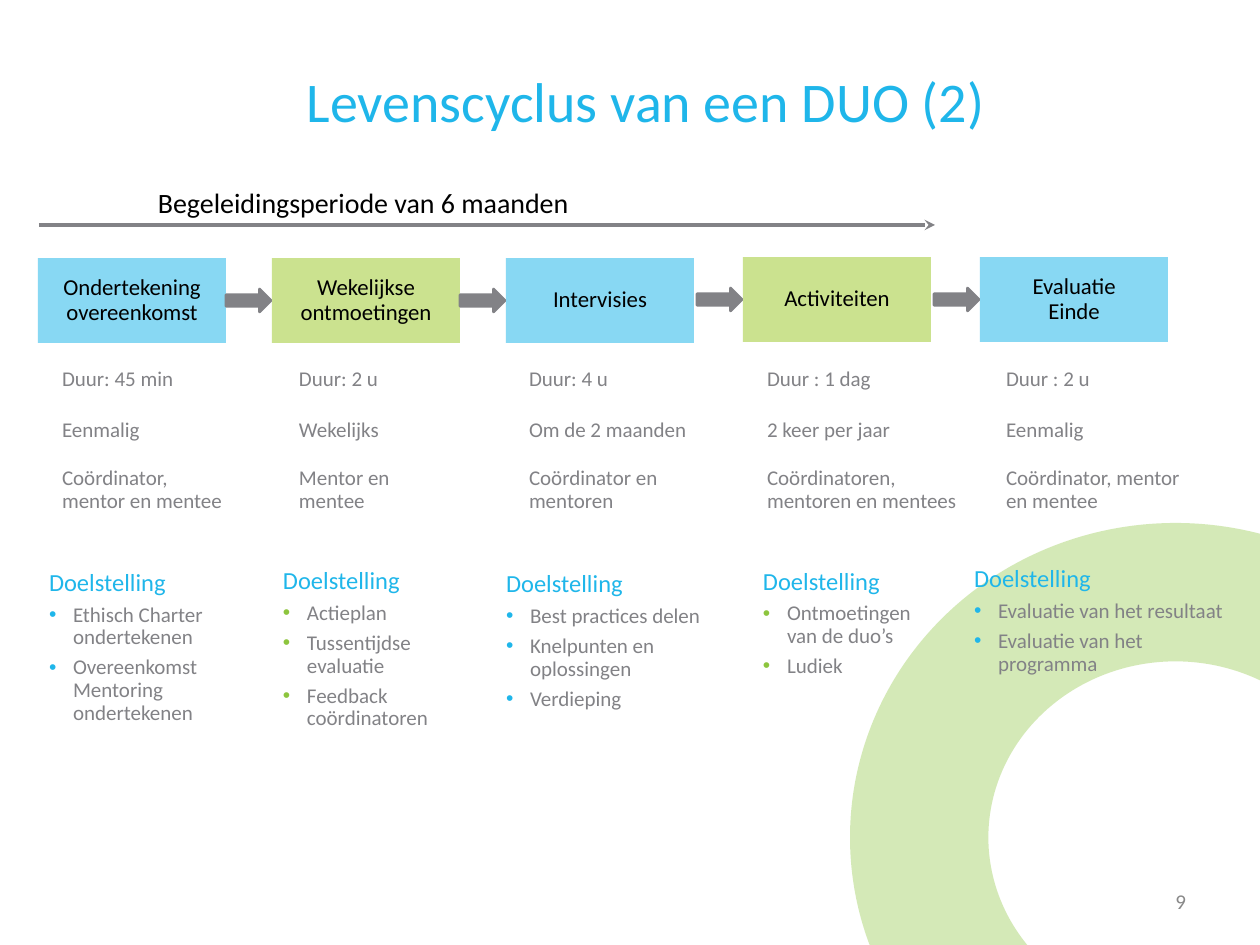
"""Build the slide on the life cycle of a DUO: five steps with details and goals."""
from dataclasses import dataclass

from lxml import etree
from pptx import Presentation
from pptx import util as u
from pptx.dml.color import RGBColor
from pptx.enum import shapes, text
from pptx.oxml import ns


@dataclass(frozen=True)
class Theme:
    font: str = "Calibri"
    blue: str = "1FB6EA"
    lime: str = "98C621"
    green: str = "8DC53E"
    grey: str = "828286"
    number: str = "888888"
    black: str = "000000"
    title_size: int = 32
    period_size: int = 16
    heading_size: int = 14
    step_size: int = 13
    body_size: int = 12


THEME = Theme()
TITLE = "Levenscyclus van een DUO (2)"
PERIOD = "Begeleidingsperiode van 6 maanden"
GOAL_HEADING = "Doelstelling"
PAGE_NUMBER = "9"

STEPS = [
    {"name": ["Ondertekening overeenkomst"], "box": (38, 258),
     "details": ["Duur: 45 min", "Eenmalig", "Coördinator, mentor en mentee"],
     "details_at": (51, 194), "goals_at": (38, 572, 233, 151),
     "goals": ["Ethisch Charter ondertekenen", "Overeenkomst Mentoring ondertekenen"]},
    {"name": ["Wekelijkse ontmoetingen"], "box": (272, 258),
     "details": ["Duur: 2 u", "Wekelijks", "Mentor en mentee"],
     "details_at": (288, 179), "goals_at": (272, 559, 188, 181),
     "goals": ["Actieplan", "Tussentijdse evaluatie", "Feedback coördinatoren"]},
    {"name": ["Intervisies"], "box": (506, 258),
     "details": ["Duur: 4 u", "Om de 2 maanden", "Coördinator en mentoren"],
     "details_at": (518, 207), "goals_at": (495, 564, 261, 154),
     "goals": ["Best practices delen", "Knelpunten en oplossingen", "Verdieping"]},
    {"name": ["Activiteiten"], "box": (743, 257),
     "details": ["Duur : 1 dag", "2 keer per jaar", "Coördinatoren, mentoren en mentees"],
     "details_at": (756, 220), "goals_at": (752, 561, 223, 125),
     "goals": ["Ontmoetingen\vvan de duo’s", "Ludiek"]},
    {"name": ["Evaluatie", "Einde"], "box": (980, 257),
     "details": ["Duur : 2 u", "Eenmalig", "Coördinator, mentor en mentee"],
     "details_at": (995, 207), "goals_at": (963, 571, 282, 100),
     "goals": ["Evaluatie van het resultaat", "Evaluatie van het programma"]},
]
BOX_SIZE = (188, 85)
ARROW_SIZE = (45, 23)
ARROW_LEAD = 46
DETAIL_ROWS = [(355, 49), (406, 49), (460, 60)]
BULLET_INDENT = 24


def px(*lengths):
    return [u.Emu(round(length * 914400 / 126)) for length in lengths]


def rgb(colour):
    return RGBColor.from_string(colour)


def set_text(shape, lines, size, colour, align=text.PP_ALIGN.LEFT, inset=11, spacing=0.9):
    frame = shape.text_frame
    frame.word_wrap = True
    frame.auto_size = text.MSO_AUTO_SIZE.NONE
    frame.vertical_anchor = text.MSO_ANCHOR.MIDDLE
    frame.margin_left, frame.margin_top, frame.margin_right, frame.margin_bottom = px(*[inset] * 4)
    frame.text = "\n".join(lines)
    for para in frame.paragraphs:
        para.alignment = align
        para.line_spacing = spacing
        for span in para.runs:
            format_span(span, size, colour)
    return frame


def format_span(span, size, colour):
    span.font.name = THEME.font
    span.font.size = u.Pt(size)
    span.font.color.rgb = rgb(colour)


def add_label(page, at, *args, **options):
    return set_text(page.shapes.add_textbox(*px(*at)), *args, **options)


def add_filled(page, preset, at, colour, opacity=100):
    shape = page.shapes.add_shape(preset, *px(*at))
    shape.shadow.inherit = False
    shape.fill.solid()
    shape.fill.fore_color.rgb = rgb(colour)
    if opacity < 100:
        fill = shape.element.spPr.find(".//" + ns.qn("a:srgbClr"))
        etree.SubElement(fill, ns.qn("a:alpha"), val=str(opacity * 1000))
    shape.line.fill.background()
    return shape


def add_bullet(para, colour):
    props = para._p.get_or_add_pPr()
    indent = px(BULLET_INDENT)[0]
    props.set("marL", str(indent))
    props.set("indent", str(-indent))
    para.space_before = u.Pt(4.2)
    bullet_colour = etree.SubElement(props, ns.qn("a:buClr"))
    etree.SubElement(bullet_colour, ns.qn("a:srgbClr"), val=colour)
    etree.SubElement(props, ns.qn("a:buFont"), typeface="Arial")
    etree.SubElement(props, ns.qn("a:buChar"), char="•")


def add_goals(page, step, bullet_colour):
    frame = add_label(page, step["goals_at"], [GOAL_HEADING], THEME.heading_size, THEME.blue)
    for goal in step["goals"]:
        para = frame.add_paragraph()
        para.text = goal
        para.line_spacing = 0.9
        add_bullet(para, bullet_colour)
        for span in para.runs:
            format_span(span, THEME.body_size, THEME.grey)


def add_step(page, index, step):
    if index % 2:
        fill, opacity, bullet = THEME.lime, 50, THEME.green
    else:
        fill, opacity, bullet = THEME.blue, 53, THEME.blue
    box = add_filled(page, shapes.MSO_SHAPE.RECTANGLE, (*step["box"], *BOX_SIZE), fill, opacity)
    set_text(box, step["name"], THEME.step_size, THEME.black, text.PP_ALIGN.CENTER, inset=3)
    left, width = step["details_at"]
    for detail, (top, height) in zip(step["details"], DETAIL_ROWS):
        add_label(page, (left, top, width, height), [detail], THEME.body_size, THEME.grey)
    add_goals(page, step, bullet)
    if index:
        box_left, box_top = step["box"]
        arrow_top = box_top + (BOX_SIZE[1] - ARROW_SIZE[1]) // 2
        arrow = add_filled(page, shapes.MSO_SHAPE.RIGHT_ARROW,
                           (box_left - ARROW_LEAD, arrow_top, *ARROW_SIZE), THEME.grey)
        arrow.line.color.rgb = rgb(THEME.grey)
        arrow.line.width = u.Pt(1.5)


def add_period(page):
    line = page.shapes.add_connector(shapes.MSO_CONNECTOR.STRAIGHT, *px(39, 225, 935, 225))
    line.line.color.rgb = rgb(THEME.grey)
    line.line.width = u.Pt(2)
    etree.SubElement(line.line._get_or_add_ln(), ns.qn("a:tailEnd"), type="stealth")
    etree.SubElement(line._element.spPr, ns.qn("a:effectLst"))
    add_label(page, (147, 180, 703, 49), [PERIOD], THEME.period_size, THEME.black)


def main():
    deck = Presentation()
    deck.slide_width, deck.slide_height = px(1260, 945)
    page = deck.slides.add_slide(deck.slide_layouts[5])
    title = page.shapes.title
    title.left, title.top, title.width, title.height = px(84, 32, 1124, 136)
    set_text(title, [TITLE], THEME.title_size, THEME.blue, text.PP_ALIGN.CENTER, spacing=1)
    ring = add_filled(page, shapes.MSO_SHAPE.DONUT, (850, 523, 651, 629), THEME.green, 37)
    ring.adjustments[0] = 0.22
    for index, step in enumerate(STEPS):
        add_step(page, index, step)
    add_period(page)
    add_label(page, (903, 876, 294, 50), [PAGE_NUMBER], THEME.body_size, THEME.number,
              text.PP_ALIGN.RIGHT, spacing=1)
    deck.save("out.pptx")


if __name__ == "__main__":
    main()
